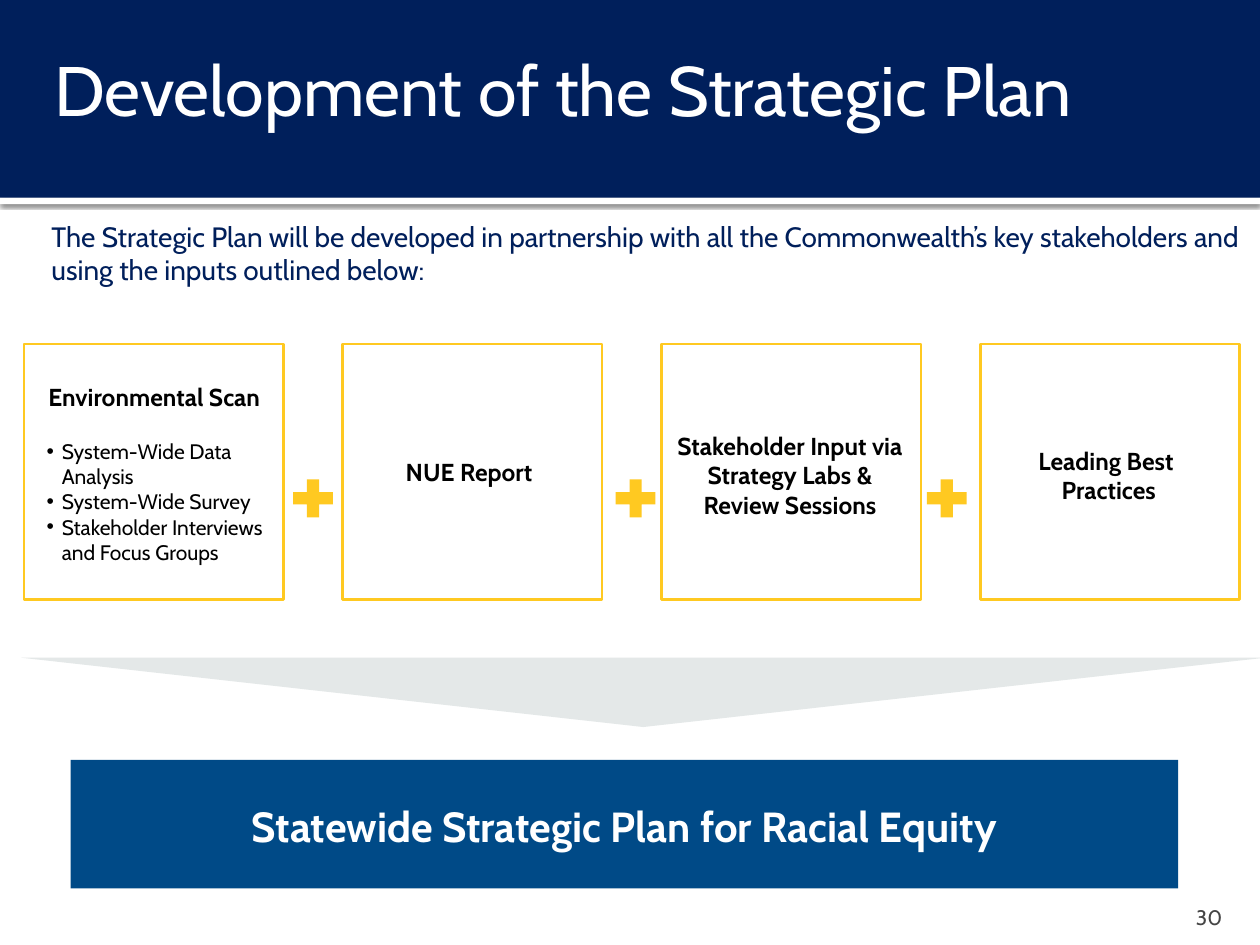
from lxml import etree
from pptx import Presentation
from pptx.dml.color import RGBColor
from pptx.enum.shapes import MSO_SHAPE
from pptx.enum.text import MSO_ANCHOR, MSO_AUTO_SIZE, PP_ALIGN
from pptx.oxml import parse_xml
from pptx.oxml.ns import nsdecls, qn
from pptx.util import Inches, Pt

RECTANGLE = MSO_SHAPE.RECTANGLE
TRIANGLE = MSO_SHAPE.ISOSCELES_TRIANGLE
PLUS = MSO_SHAPE.MATH_PLUS
LEFT, CENTER, RIGHT = PP_ALIGN.LEFT, PP_ALIGN.CENTER, PP_ALIGN.RIGHT
TOP, MIDDLE, BOTTOM = MSO_ANCHOR.TOP, MSO_ANCHOR.MIDDLE, MSO_ANCHOR.BOTTOM
FIXED, GROW = MSO_AUTO_SIZE.NONE, MSO_AUTO_SIZE.SHAPE_TO_FIT_TEXT

WHITE = RGBColor(0xFF, 0xFF, 0xFF)
BLACK = RGBColor(0, 0, 0)
NAVY = RGBColor(0x00, 0x1F, 0x5B)
BLUE = RGBColor(0x00, 0x4A, 0x87)
GOLD = RGBColor(0xFF, 0xC9, 0x21)
MIST = RGBColor(0xE4, 0xE8, 0xE8)
GRAY = RGBColor(0x45, 0x45, 0x45)

FONT = "Cabin"
INSETS = (0.1, 0.05, 0.1, 0.05)
NO_INSETS = (0, 0, 0, 0)

CARD_LEFT, CARD_TOP, CARD_PITCH = 0.19, 2.73, 2.53
CARD_WIDTH, CARD_HEIGHT = 2.06, 2.03
HEADINGS = [
    ((0.21, 3.03, 2.03, 0.24), ["Environmental Scan"], 6),
    ((2.73, 3.63, 2.03, 0.24), ["NUE Report "], 6),
    ((5.31, 3.42, 1.92, 0.71),
     ["Stakeholder Input via Strategy Labs & Review Sessions"], 6),
    ((7.84, 3.54, 1.92, 0.47), ["Leading Best ", "Practices"], 0),
]
SCAN_ITEMS = ["System-Wide Data Analysis", "System-Wide Survey",
              "Stakeholder Interviews and Focus Groups"]
PLUS_LEFTS = [2.27, 4.83, 7.3]


class SlideBuilder:
    def __init__(self, slide, font):
        self.slide = slide
        self.font = font

    def shape(self, kind, at, fill=None, line=None):
        shape = self.slide.shapes.add_shape(kind, *map(Inches, at))
        shape.shadow.inherit = False
        if fill is None:
            shape.fill.background()
        else:
            shape.fill.solid()
            shape.fill.fore_color.rgb = fill
        if line is None:
            shape.line.fill.background()
        else:
            shape.line.color.rgb = line
            shape.line.width = Pt(1.5)
        return shape

    def shadow(self, shape):
        effects = shape.element.spPr.find(qn("a:effectLst"))
        effects.append(parse_xml(
            f'<a:outerShdw {nsdecls("a")} blurRad="31750" dist="10160" dir="5400000">'
            '<a:srgbClr val="000000"><a:alpha val="60000"/></a:srgbClr></a:outerShdw>'))

    def fill_text(self, box, lines, size, color, bold=False, align=LEFT, anchor=TOP,
                  insets=INSETS, fit=FIXED, before=0, spacing=None):
        frame = box.text_frame
        frame.word_wrap = True
        frame.auto_size = fit
        frame.vertical_anchor = anchor
        (frame.margin_left, frame.margin_top,
         frame.margin_right, frame.margin_bottom) = map(Inches, insets)
        for index, line in enumerate(lines):
            para = frame.add_paragraph() if index else frame.paragraphs[0]
            para.alignment = align
            para.space_before = Pt(before)
            if spacing:
                para.line_spacing = spacing
            span = para.add_run()
            span.text = line
            span.font.name = self.font
            span.font.size = Pt(size)
            span.font.bold = bold
            span.font.color.rgb = color
        return box

    def text(self, at, lines, size, color, **style):
        box = self.slide.shapes.add_textbox(*map(Inches, at))
        return self.fill_text(box, lines, size, color, **style)

    def placeholder(self, box, at, lines, size, color, **style):
        box.left, box.top, box.width, box.height = map(Inches, at)
        # Bring the placeholder in front of the shapes drawn so far
        box.element.getparent().append(box.element)
        return self.fill_text(box, lines, size, color, **style)

    def bullets(self, box, indent, hanging):
        for para in box.text_frame.paragraphs:
            properties = para._p.get_or_add_pPr()
            properties.set("marL", str(Inches(indent)))
            properties.set("indent", str(-Inches(hanging)))
            etree.SubElement(properties, qn("a:buChar")).set("char", "•")


def main():
    deck = Presentation()
    deck.slide_width, deck.slide_height = Inches(10), Inches(7.5)
    slide = deck.slides.add_slide(deck.slide_layouts[1])
    title, body = slide.placeholders
    builder = SlideBuilder(slide, FONT)

    # Header band, title and page number
    strip = builder.shape(RECTANGLE, (0, 1.57, 10, 0.05), WHITE)
    builder.shadow(strip)
    builder.shape(RECTANGLE, (0, 0, 10, 1.57), NAVY)
    builder.text((9, 7.08, 0.8, 0.3), ["30"], 12, GRAY, align=RIGHT,
                 anchor=BOTTOM, insets=(0.1, 0.05, 0.1, 0))
    builder.placeholder(title, (0.33, 0.58, 9, 0.92),
                        ["Development of the Strategic Plan"], 40, WHITE,
                        anchor=MIDDLE, insets=(0.1, 0.05, 0.05, 0.72))

    # Introduction
    builder.text((0.31, 1.69, 9.69, 0.68),
                 ["The Strategic Plan will be developed in partnership with all the "
                  "Commonwealth’s key stakeholders and using the inputs outlined below:"],
                 16, NAVY)

    # Four input cards joined by plus signs
    for index, (at, lines, before) in enumerate(HEADINGS):
        left = CARD_LEFT + index * CARD_PITCH
        builder.shape(RECTANGLE, (left, CARD_TOP, CARD_WIDTH, CARD_HEIGHT), line=GOLD)
        builder.text(at, lines, 14, BLACK, bold=True, align=CENTER,
                     insets=NO_INSETS, fit=GROW, before=before)
    for left in PLUS_LEFTS:
        builder.shape(PLUS, (left, 3.75, 0.43, 0.41), GOLD)

    # Parts of the environmental scan
    builder.placeholder(body, (0.17, 3.48, 2.03, 1.01), SCAN_ITEMS, 12, BLACK,
                        insets=NO_INSETS, fit=GROW)
    builder.bullets(body, 0.32, 0.12)

    # Funnel and resulting plan
    funnel = builder.shape(TRIANGLE, (0.17, 5.22, 9.87, 0.55), MIST)
    funnel.rotation = 180
    plan = builder.shape(RECTANGLE, (0.56, 6.03, 8.79, 1.02), BLUE)
    builder.fill_text(plan, ["Statewide Strategic Plan for Racial Equity"], 24, WHITE,
                      bold=True, align=CENTER, anchor=MIDDLE,
                      insets=(0.1, 0.1, 0.1, 0.1), spacing=1.06)

    deck.save("out.pptx")


if __name__ == "__main__":
    main()
